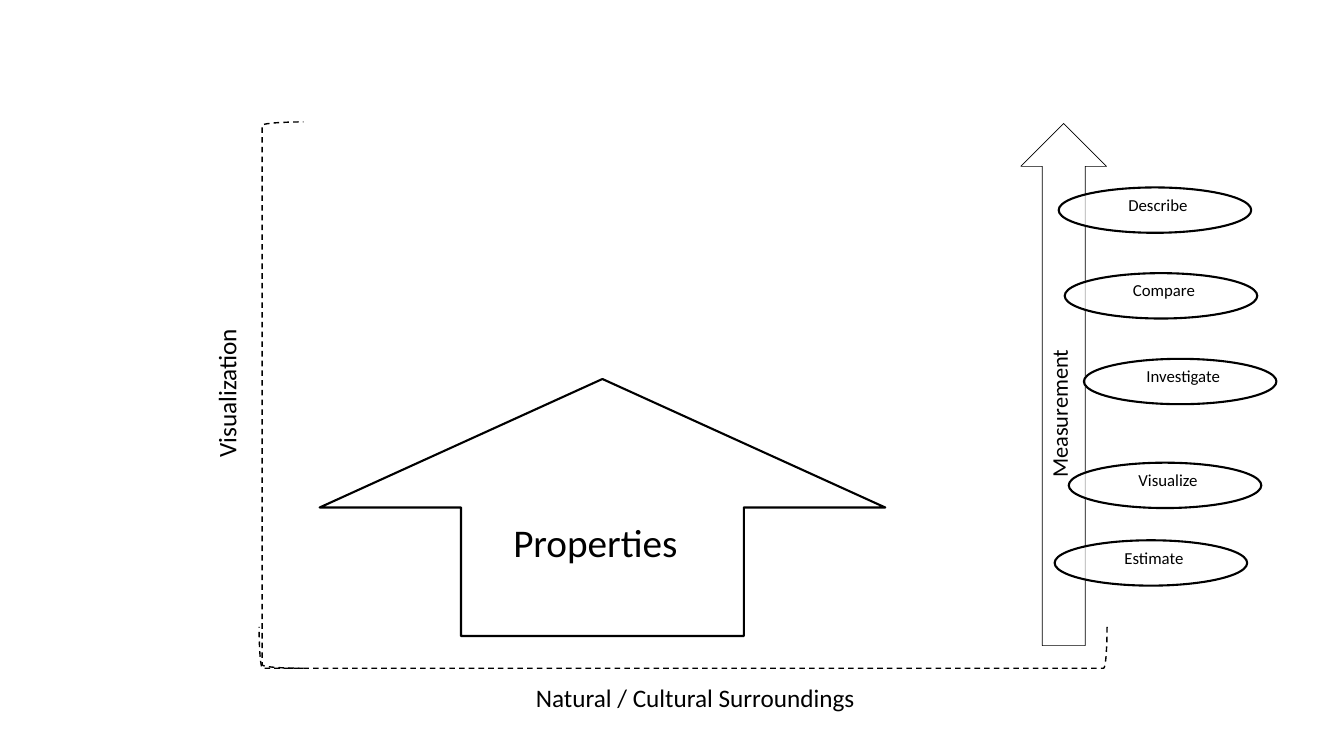
from lxml import etree
from pptx import Presentation
from pptx.dml.color import RGBColor
from pptx.enum.dml import MSO_LINE
from pptx.enum.shapes import MSO_SHAPE
from pptx.enum.text import PP_ALIGN
from pptx.oxml.ns import qn
from pptx.util import Inches, Pt

DASH = MSO_LINE.DASH
BRACKET = MSO_SHAPE.LEFT_BRACKET
UP_ARROW = MSO_SHAPE.UP_ARROW
RIGHT_ARROW = MSO_SHAPE.RIGHT_ARROW
ELLIPSE = MSO_SHAPE.OVAL
CENTER = PP_ALIGN.CENTER


class Theme:
    font = "Calibri"
    ink = RGBColor(0, 0, 0)
    paper = RGBColor(255, 255, 255)
    paper_opacity = 67
    frame_size, measure_size, heading_size, skill_size = 18, 16, 28, 12
    thin, dashed, bold = 0.5, 1, 1.5


# text, (left, top, width, height), rotation
FRAME_LABELS = [
    ("Natural / Cultural Surroundings", (2.6, 6.72, 8.59, 0.4), 0),
    ("Visualization", (0.83, 3.7, 2.83, 0.4), 270),
]
# (left, top, width, height), rotation
FRAME_BRACKETS = [
    ((2.6, 1.21, 0.41, 5.42), 0),
    ((6.57, 2.22, 0.41, 8.41), 270),
]
PROPERTIES = ("Properties", (4.87, 5.09, 2.07, 0.57))
PROPERTIES_ARROW = (3.17, 3.76, 5.61, 2.55)
MEASUREMENT = ("Measurement", (8.96, 3.92, 3.09, 0.37))
MEASUREMENT_ARROW = (7.96, 3.39, 5.18, 0.85)
# text, left and top of the ellipse
SKILLS = [
    ("Describe", 10.5, 1.86),
    ("Estimate", 10.46, 5.36),
    ("Compare", 10.56, 2.71),
    ("Investigate", 10.75, 3.56),
    ("Visualize", 10.6, 4.59),
]
SKILL_WIDTH, SKILL_HEIGHT = 1.91, 0.45
LABEL_WIDTH, LABEL_HEIGHT, LABEL_DROP = 1.66, 0.28, 0.02


def add_outline(shapes, kind, place, width, rotation=0, dash=None):
    """Add an unfilled preset shape with a black outline."""
    shape = shapes.add_shape(kind, *map(Inches, place))
    shape.rotation = rotation
    shape.shadow.inherit = False
    shape.fill.background()
    shape.line.color.rgb = Theme.ink
    shape.line.width = Pt(width)
    if dash:
        shape.line.dash_style = dash
    return shape


def add_label(shapes, text, place, size, rotation=0):
    box = shapes.add_textbox(*map(Inches, place))
    box.rotation = rotation
    box.text_frame.word_wrap = True
    para = box.text_frame.paragraphs[0]
    para.alignment = CENTER
    span = para.add_run()
    span.text = text
    for name, value in {"name": Theme.font, "size": Pt(size)}.items():
        setattr(span.font, name, value)
    span.font.color.rgb = Theme.ink


def fill_translucent(shape):
    shape.fill.solid()
    shape.fill.fore_color.rgb = Theme.paper
    color = shape.fill._xPr.find(qn("a:solidFill"))[0]
    etree.SubElement(color, qn("a:alpha"), val=str(Theme.paper_opacity * 1000))


def add_skill(page, text, left, top):
    group = page.shapes.add_group_shape().shapes
    ellipse = add_outline(group, ELLIPSE, (left, top, SKILL_WIDTH, SKILL_HEIGHT), Theme.bold)
    fill_translucent(ellipse)
    label_left = left + (SKILL_WIDTH - LABEL_WIDTH) / 2 + 0.03
    add_label(group, text, (label_left, top + LABEL_DROP, LABEL_WIDTH, LABEL_HEIGHT),
              Theme.skill_size)


def main():
    deck = Presentation()
    deck.slide_width, deck.slide_height = Inches(13.33), Inches(7.5)
    page = deck.slides.add_slide(deck.slide_layouts[6])

    for text, place, rotation in FRAME_LABELS:
        add_label(page.shapes, text, place, Theme.frame_size, rotation)
    for place, rotation in FRAME_BRACKETS:
        add_outline(page.shapes, BRACKET, place, Theme.dashed, rotation, DASH)

    properties = page.shapes.add_group_shape().shapes
    add_outline(properties, UP_ARROW, PROPERTIES_ARROW, Theme.bold)
    add_label(properties, *PROPERTIES, Theme.heading_size)

    measurement = page.shapes.add_group_shape().shapes
    add_label(measurement, *MEASUREMENT, Theme.measure_size, 270)
    add_outline(measurement, RIGHT_ARROW, MEASUREMENT_ARROW, Theme.thin, 270)

    for skill in SKILLS:
        add_skill(page, *skill)
    deck.save("out.pptx")


if __name__ == "__main__":
    main()
